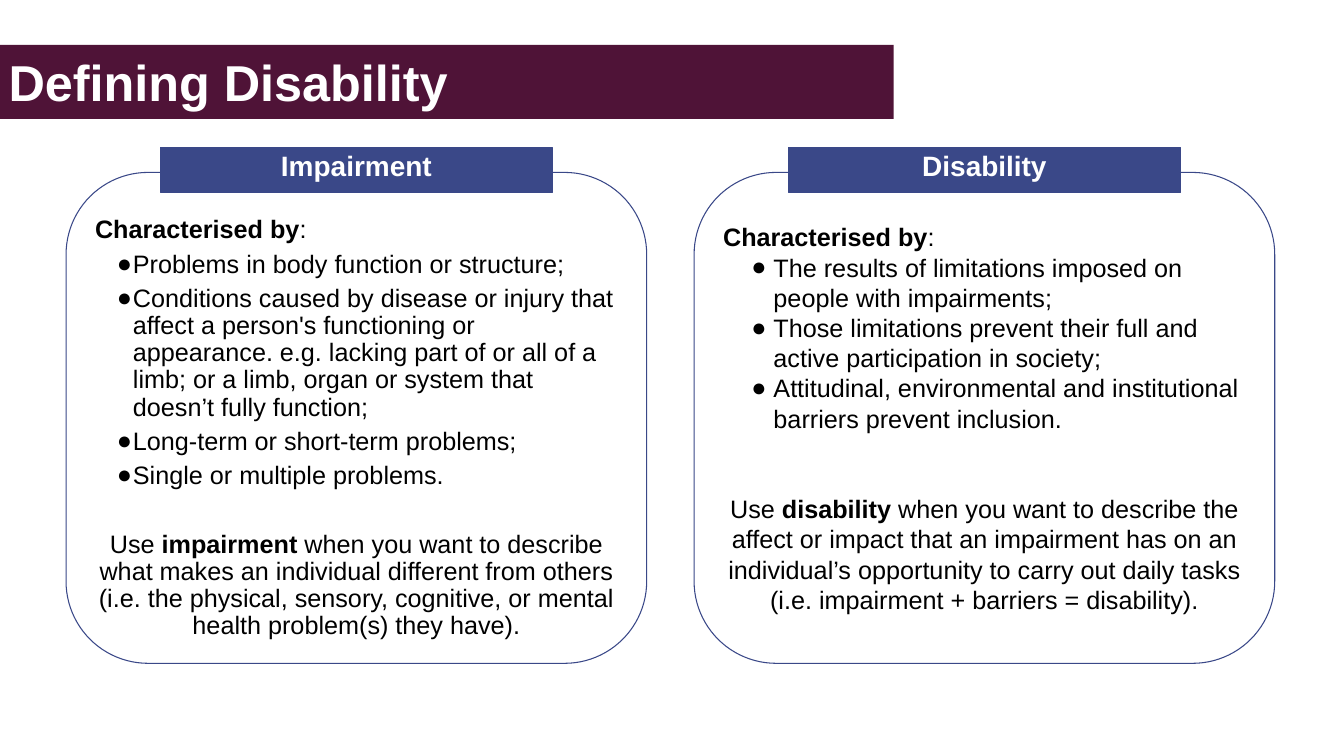
import pptx
import pptx.util
import pptx.dml.color
import pptx.enum.shapes
import pptx.enum.text
import pptx.oxml.ns
from lxml import etree

Cm = pptx.util.Cm
Pt = pptx.util.Pt
RGBColor = pptx.dml.color.RGBColor
SHAPES = pptx.enum.shapes.MSO_SHAPE
ALIGN = pptx.enum.text.PP_ALIGN
ANCHOR = pptx.enum.text.MSO_ANCHOR

BLUE = RGBColor(0x3A, 0x48, 0x88)
PLUM = RGBColor(0x4F, 0x13, 0x37)
WHITE = RGBColor(0xFF, 0xFF, 0xFF)
BLACK = RGBColor(0, 0, 0)
FONT = "Arial"

TITLE = "Defining Disability"
LEAD = [("Characterised by", True), (":", False)]
PANELS = [
    {
        "heading": "Impairment",
        "bullets": [
            "Problems in body function or structure;",
            "Conditions caused by disease or injury that affect a person's functioning or "
            "appearance. e.g. lacking part of or all of a limb; or a limb, organ or system "
            "that doesn’t fully function;",
            "Long-term or short-term problems;",
            "Single or multiple problems.",
        ],
        "usage": [
            ("Use ", False),
            ("impairment", True),
            (" when you want to describe what makes an individual different from others "
             "(i.e. the physical, sensory, cognitive, or mental health problem(s) they have).",
             False),
        ],
        "top_inset": 1.04, "line_spacing": 0.9, "bullet_gap": 10, "usage_gap": 59,
        "indent": (1.91, -0.81),
    },
    {
        "heading": "Disability",
        "bullets": [
            "The results of limitations imposed on people with impairments;",
            "Those limitations prevent their full and active participation in society;",
            "Attitudinal, environmental and institutional barriers prevent inclusion.",
        ],
        "usage": [
            ("Use ", False),
            ("disability", True),
            (" when you want to describe the affect or impact that an impairment has on an "
             "individual’s opportunity to carry out daily tasks "
             "(i.e. impairment + barriers = disability).", False),
        ],
        "top_inset": 1.42, "line_spacing": 1.0, "bullet_gap": 0, "usage_gap": 86,
        "indent": (2.54, -1.12),
    },
]

PANEL_LEFT, PANEL_TOP, PANEL_WIDTH, PANEL_HEIGHT = 3.33, 8.69, 29.26, 24.74
PANEL_PITCH = 31.65
HEADING_TOP, HEADING_WIDTH, HEADING_HEIGHT = 7.42, 19.74, 2.29


def add_box(slide, kind, box, fill=None, line=None, insets=(0.25,) * 4, anchor=ANCHOR.TOP):
    """Add a shape; box is left, top, width, height and insets are left, top, right, bottom."""
    shape = slide.shapes.add_shape(kind, *(Cm(length) for length in box))
    shape.shadow.inherit = False
    if fill is None:
        shape.fill.background()
    else:
        shape.fill.solid()
        shape.fill.fore_color.rgb = fill
    if line is None:
        shape.line.fill.background()
    else:
        shape.line.color.rgb = line
        shape.line.width = Pt(1.5)
    frame = shape.text_frame
    frame.word_wrap = True
    frame.vertical_anchor = anchor
    (frame.margin_left, frame.margin_top,
     frame.margin_right, frame.margin_bottom) = (Cm(inset) for inset in insets)
    return shape


def add_bullet(paragraph, indent):
    properties = paragraph._p.get_or_add_pPr()
    margin, hanging = indent
    properties.set("marL", str(Cm(margin)))
    properties.set("indent", str(Cm(hanging)))
    qn = pptx.oxml.ns.qn
    color = etree.SubElement(properties, qn("a:buClr"))
    etree.SubElement(color, qn("a:srgbClr"), val=str(BLACK))
    etree.SubElement(properties, qn("a:buFont"), typeface=FONT)
    etree.SubElement(properties, qn("a:buChar"), char="●")


def write(shape, runs, size=36, color=BLACK, align=ALIGN.LEFT, line_spacing=1.0,
          space_before=0, indent=None):
    """Write (text, bold) runs as the next paragraph; an indent makes it a bullet."""
    frame = shape.text_frame
    paragraph = frame.add_paragraph() if frame.text else frame.paragraphs[0]
    if indent:
        add_bullet(paragraph, indent)
    paragraph.alignment = align
    paragraph.line_spacing = line_spacing
    paragraph.space_before = Pt(space_before)
    for text, bold in runs:
        run = paragraph.add_run()
        run.text = text
        run.font.name = FONT
        run.font.size = Pt(size)
        run.font.bold = bold
        run.font.color.rgb = color


def add_panel(slide, left, panel):
    spacing = panel["line_spacing"]
    body = add_box(slide, SHAPES.ROUNDED_RECTANGLE,
                   (left, PANEL_TOP, PANEL_WIDTH, PANEL_HEIGHT), line=BLUE,
                   insets=(0.25, panel["top_inset"], 0.25, 0.25))
    body.adjustments[0] = 0.167
    write(body, LEAD, line_spacing=0.9)
    for bullet in panel["bullets"]:
        write(body, [(bullet, False)], line_spacing=spacing,
              space_before=panel["bullet_gap"], indent=panel["indent"])
    write(body, panel["usage"], align=ALIGN.CENTER, line_spacing=spacing,
          space_before=panel["usage_gap"])

    heading_left = left + (PANEL_WIDTH - HEADING_WIDTH) / 2
    heading = add_box(slide, SHAPES.RECTANGLE,
                      (heading_left, HEADING_TOP, HEADING_WIDTH, HEADING_HEIGHT),
                      fill=BLUE, line=BLUE)
    write(heading, [(panel["heading"], True)], size=40, color=WHITE,
          align=ALIGN.CENTER, line_spacing=0.9)


def main():
    presentation = pptx.Presentation()
    presentation.slide_width = Cm(67.73)
    presentation.slide_height = Cm(38.1)
    slide = presentation.slides.add_slide(presentation.slide_layouts[6])
    for index, panel in enumerate(PANELS):
        add_panel(slide, PANEL_LEFT + index * PANEL_PITCH, panel)
    banner = add_box(slide, SHAPES.RECTANGLE, (0, 2.26, 45.03, 3.73), fill=PLUM,
                     insets=(0.43, 0.15, 0.15, 0.15), anchor=ANCHOR.MIDDLE)
    write(banner, [(TITLE, True)], size=72, color=WHITE)
    presentation.save("out.pptx")


if __name__ == "__main__":
    main()
